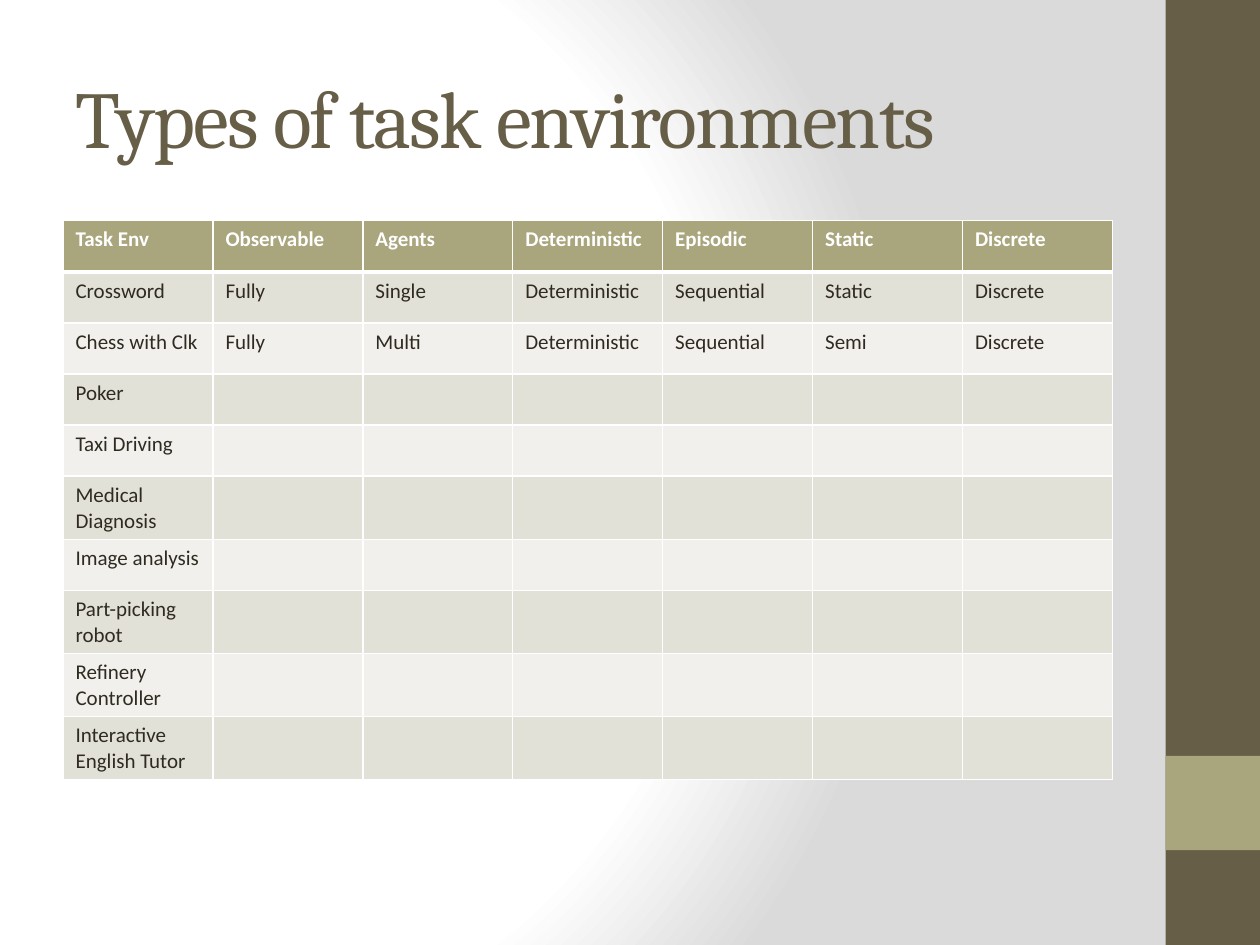
from dataclasses import dataclass

from lxml.etree import SubElement
from pptx import Presentation
from pptx.dml.color import RGBColor
from pptx.enum.shapes import MSO_SHAPE as Shape
from pptx.enum.text import MSO_ANCHOR as Anchor
from pptx.oxml import parse_xml
from pptx.oxml.ns import nsdecls, qn
from pptx.util import Cm, Pt


@dataclass(frozen=True)
class Theme:
    brown: str = "675E47"
    olive: str = "A9A57C"
    ink: str = "2F2B20"
    white: str = "FFFFFF"
    gray: str = "DADADA"
    bands: tuple = ("E2E1D7", "F1F0EC")
    title_font: str = "Cambria"
    body_font: str = "Calibri"
    title_size: int = 46
    body_size: int = 12


THEME = Theme()

HEADINGS = ["Task Env", "Observable", "Agents", "Deterministic",
            "Episodic", "Static", "Discrete"]
ENVIRONMENTS = [
    ["Crossword", "Fully", "Single", "Deterministic", "Sequential", "Static", "Discrete"],
    ["Chess with Clk", "Fully", "Multi", "Deterministic", "Sequential", "Semi", "Discrete"],
    ["Poker"],
    ["Taxi Driving"],
    ["Medical Diagnosis"],
    ["Image analysis"],
    ["Part-picking robot"],
    ["Refinery Controller"],
    ["Interactive English Tutor"],
]


def write_text(frame, text, *, font=THEME.body_font, size=THEME.body_size,
               color=THEME.ink, bold=False, spacing=0):
    """Write one formatted span; spacing is in points."""
    span = frame.paragraphs[0].add_run()
    span.text = text
    span.font.name = font
    span.font.size = Pt(size)
    span.font.bold = bold
    span.font.color.rgb = RGBColor.from_string(color)
    if spacing:
        span.font._element.set("spc", str(spacing * 100))


def paint_background(page):
    stops = "".join(
        f'<a:gs pos="{percent * 1000}"><a:srgbClr val="{color}"/></a:gs>'
        for percent, color in [(0, THEME.white), (75, THEME.white), (100, THEME.gray)])
    background = parse_xml(
        f'<p:bg {nsdecls("p", "a")}><p:bgPr><a:gradFill rotWithShape="1">'
        f'<a:gsLst>{stops}</a:gsLst><a:path path="circle">'
        '<a:fillToRect l="20000" t="50000" r="100000" b="50000"/></a:path>'
        '</a:gradFill><a:effectLst/></p:bgPr></p:bg>')
    page._element.cSld.insert(0, background)


def add_block(page, left, top, width, height, color):
    block = page.shapes.add_shape(Shape.RECTANGLE, left, top, width, height)
    block.shadow.inherit = False
    block.fill.solid()
    block.fill.fore_color.rgb = RGBColor.from_string(color)
    block.line.fill.background()


def add_title(page, text):
    box = page.shapes.add_textbox(Cm(1.27), Cm(0.76), Cm(21.16), Cm(3.18))
    box.text_frame.word_wrap = True
    box.text_frame.vertical_anchor = Anchor.MIDDLE
    write_text(box.text_frame, text, font=THEME.title_font,
               size=THEME.title_size, color=THEME.brown, spacing=-1)


def add_borders(cell, top, bottom):
    """Draw white cell borders; top and bottom widths are in points."""
    properties = cell._tc.get_or_add_tcPr()
    for side, width in [("L", 1), ("R", 1), ("T", top), ("B", bottom)]:
        line = SubElement(properties, qn(f"a:ln{side}"), w=str(Pt(width)))
        fill = SubElement(line, qn("a:solidFill"))
        SubElement(fill, qn("a:srgbClr"), val=THEME.white)


def fill_cell(cell, text, row):
    header = row == 0
    # The rule under the header is heavier than the others
    add_borders(cell, top=3 if row == 1 else 1, bottom=3 if header else 1)
    cell.fill.solid()
    color = THEME.olive if header else THEME.bands[(row - 1) % 2]
    cell.fill.fore_color.rgb = RGBColor.from_string(color)
    if text:
        write_text(cell.text_frame, text, bold=header,
                   color=THEME.white if header else THEME.ink)


def add_environment_table(page):
    rows = [HEADINGS] + ENVIRONMENTS
    columns = len(HEADINGS)
    row_height = Cm(1.03)
    table = page.shapes.add_table(
        len(rows), columns, Cm(1.27), Cm(4.45),
        Cm(21.16), row_height * len(rows)).table
    for row, texts in enumerate(rows):
        table.rows[row].height = row_height
        for column in range(columns):
            text = texts[column] if column < len(texts) else ""
            fill_cell(table.cell(row, column), text, row)


def main():
    deck = Presentation()
    deck.slide_width, deck.slide_height = Cm(25.4), Cm(19.05)
    page = deck.slides.add_slide(deck.slide_layouts[6])

    # Background and side bar
    paint_background(page)
    bar_left, bar_width = Cm(23.5), Cm(1.9)
    add_block(page, bar_left, 0, bar_width, deck.slide_height, THEME.brown)
    add_block(page, bar_left, Cm(15.24), bar_width, bar_width, THEME.olive)

    # Content
    add_title(page, "Types of task environments")
    add_environment_table(page)

    deck.save("out.pptx")


if __name__ == "__main__":
    main()
